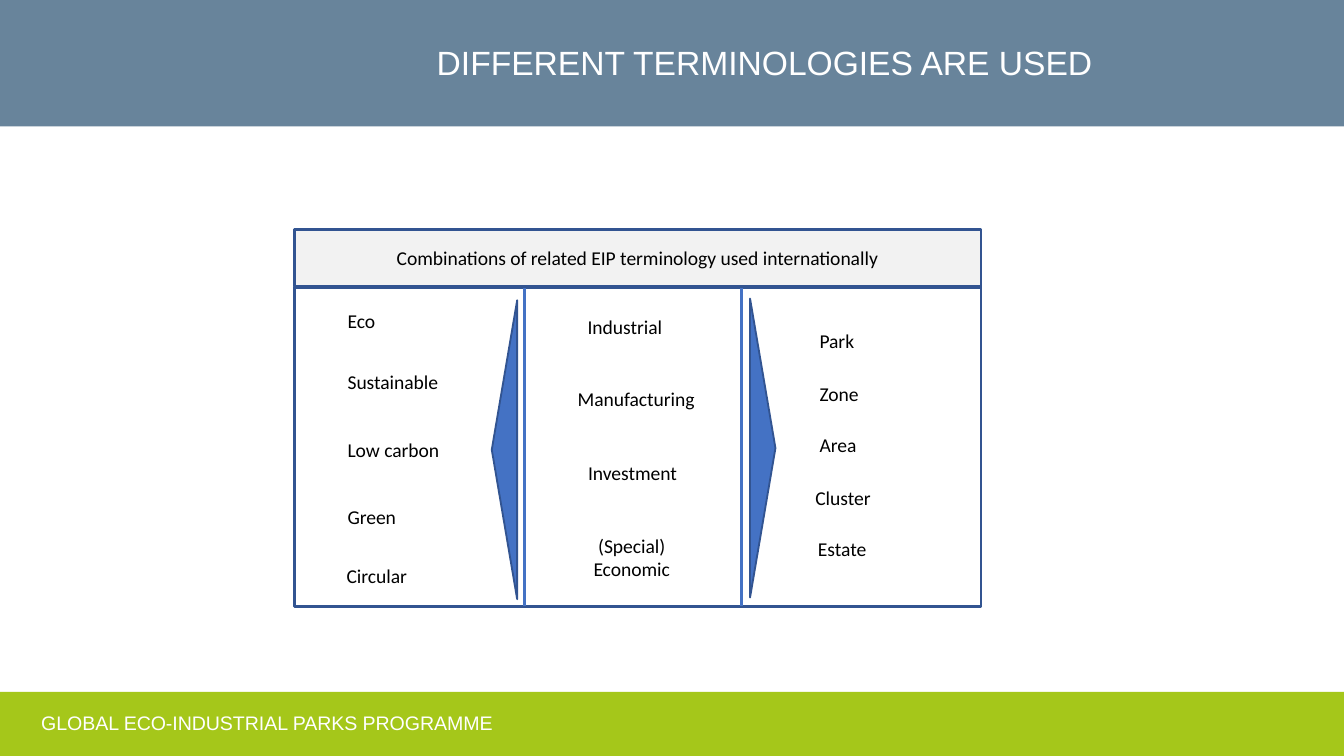
from dataclasses import dataclass

from lxml import etree
from pptx import Presentation
from pptx.dml.color import RGBColor
from pptx.enum import shapes, text
from pptx.oxml import ns
from pptx.util import Cm, Pt


@dataclass(frozen=True)
class Theme:
    slate: str = "68849B"
    lime: str = "A5C71A"
    blue: str = "4472C4"
    navy: str = "325491"
    grey: str = "F2F2F2"
    white: str = "FFFFFF"
    black: str = "000000"
    heading_font: str = "Arial"
    body_font: str = "Calibri"
    title_size: float = 18
    body_size: float = 10.5


THEME = Theme()
SLIDE_W, SLIDE_H = 25.4, 14.29
TERM_H = 0.71

# Diagram frame: header strip above a three-column body
FRAME_LEFT, FRAME_W = 5.56, 12.98
HEADER_TOP, HEADER_H = 4.34, 1.07
BODY_TOP, BODY_H = 5.44, 6.02
DIVIDERS = (9.91, 14.02)

# Terms of each column: wording, left, top, width
QUALIFIERS = [
    ("Eco", 6.32, 5.72, 2.62),
    ("Sustainable", 6.32, 6.86, 2.9),
    ("Low carbon", 6.32, 8.15, 2.9),
    ("Green", 6.32, 9.42, 2.62),
    ("Circular", 6.3, 10.54, 2.8),
]
ACTIVITIES = [
    ("Industrial", 10.36, 5.82, 2.9),
    ("Manufacturing", 10.08, 7.19, 3.89),
    ("Investment", 10.01, 8.59, 3.89),
    ("(Special) Economic", 10.49, 9.96, 2.9),
]
PLACES = [
    ("Park", 15.24, 6.1, 2.62),
    ("Zone", 15.24, 7.09, 2.62),
    ("Area", 15.24, 8.05, 2.62),
    ("Cluster", 15.16, 9.07, 2.62),
    ("Estate", 15.21, 10.03, 2.62),
]


def rgb(value):
    return RGBColor.from_string(value)


def write(frame, wording, color=THEME.black, font=THEME.body_font,
          size=THEME.body_size, align=text.PP_ALIGN.LEFT,
          anchor=text.MSO_ANCHOR.TOP):
    frame.text = wording
    frame.word_wrap = True
    frame.vertical_anchor = anchor
    paragraph = frame.paragraphs[0]
    paragraph.alignment = align
    for run in paragraph.runs:
        run.font.name = font
        run.font.size = Pt(size)
        run.font.color.rgb = rgb(color)


def add_block(slide, kind, box, fill=None, line=None, width=1.5, rotation=0):
    block = slide.shapes.add_shape(kind, *map(Cm, box))
    block.shadow.inherit = False
    block.rotation = rotation
    if fill:
        block.fill.solid()
        block.fill.fore_color.rgb = rgb(fill)
    else:
        block.fill.background()
    if line:
        block.line.color.rgb = rgb(line)
        block.line.width = Pt(width)
    else:
        block.line.fill.background()
    return block


def add_label(slide, box, wording, **style):
    label = slide.shapes.add_textbox(*map(Cm, box))
    write(label.text_frame, wording, **style)


def add_terms(slide, terms, align=text.PP_ALIGN.LEFT):
    for wording, left, top, width in terms:
        add_label(slide, (left, top, width, TERM_H), wording, align=align)


def add_divider(slide, x):
    divider = slide.shapes.add_connector(
        shapes.MSO_CONNECTOR.STRAIGHT,
        Cm(x), Cm(BODY_TOP), Cm(x), Cm(BODY_TOP + BODY_H))
    divider.line.color.rgb = rgb(THEME.blue)
    divider.line.width = Pt(1.5)
    etree.SubElement(divider.element.spPr, ns.qn("a:effectLst"))


def set_title(slide, wording):
    title = slide.shapes.title
    title.left, title.top, title.width, title.height = map(
        Cm, (8, -1.02, 19.94, 4.5))
    write(title.text_frame, wording, THEME.white, THEME.heading_font,
          THEME.title_size, anchor=text.MSO_ANCHOR.MIDDLE)
    title.text_frame.auto_size = text.MSO_AUTO_SIZE.NONE
    title.text_frame.paragraphs[0].line_spacing = 0.9
    # Bring the title in front of its band
    title.element.getparent().append(title.element)


def main():
    deck = Presentation()
    deck.slide_width, deck.slide_height = Cm(SLIDE_W), Cm(SLIDE_H)
    slide = deck.slides.add_slide(deck.slide_layouts.get_by_name("Title Only"))
    rectangle = shapes.MSO_SHAPE.RECTANGLE
    triangle = shapes.MSO_SHAPE.ISOSCELES_TRIANGLE

    # Bands with title and programme name
    add_block(slide, rectangle, (0, 13.08, SLIDE_W, SLIDE_H - 13.08), THEME.lime)
    add_block(slide, rectangle, (0, 0, SLIDE_W, 2.39), THEME.slate)
    add_label(slide, (0.53, 13.16, 11.33, 1.02),
              "GLOBAL ECO-INDUSTRIAL PARKS PROGRAMME", color=THEME.white,
              font=THEME.heading_font, anchor=text.MSO_ANCHOR.MIDDLE)
    set_title(slide, "DIFFERENT TERMINOLOGIES ARE USED")

    # Diagram frame
    header = add_block(slide, rectangle,
                       (FRAME_LEFT, HEADER_TOP, FRAME_W, HEADER_H),
                       THEME.grey, THEME.navy)
    write(header.text_frame,
          "Combinations of related EIP terminology used internationally",
          align=text.PP_ALIGN.CENTER, anchor=text.MSO_ANCHOR.MIDDLE)
    add_block(slide, rectangle, (FRAME_LEFT, BODY_TOP, FRAME_W, BODY_H),
              line=THEME.navy)
    for x in DIVIDERS:
        add_divider(slide, x)

    # Pointers out of the middle column
    for left, top, rotation in ((6.71, 8.26, 270), (11.59, 8.23, 90)):
        add_block(slide, triangle, (left, top, 5.65, 0.48), THEME.blue,
                  THEME.navy, 1, rotation)

    # Terms by column
    add_terms(slide, QUALIFIERS)
    add_terms(slide, ACTIVITIES, text.PP_ALIGN.CENTER)
    add_terms(slide, PLACES)

    deck.save("out.pptx")


if __name__ == "__main__":
    main()
